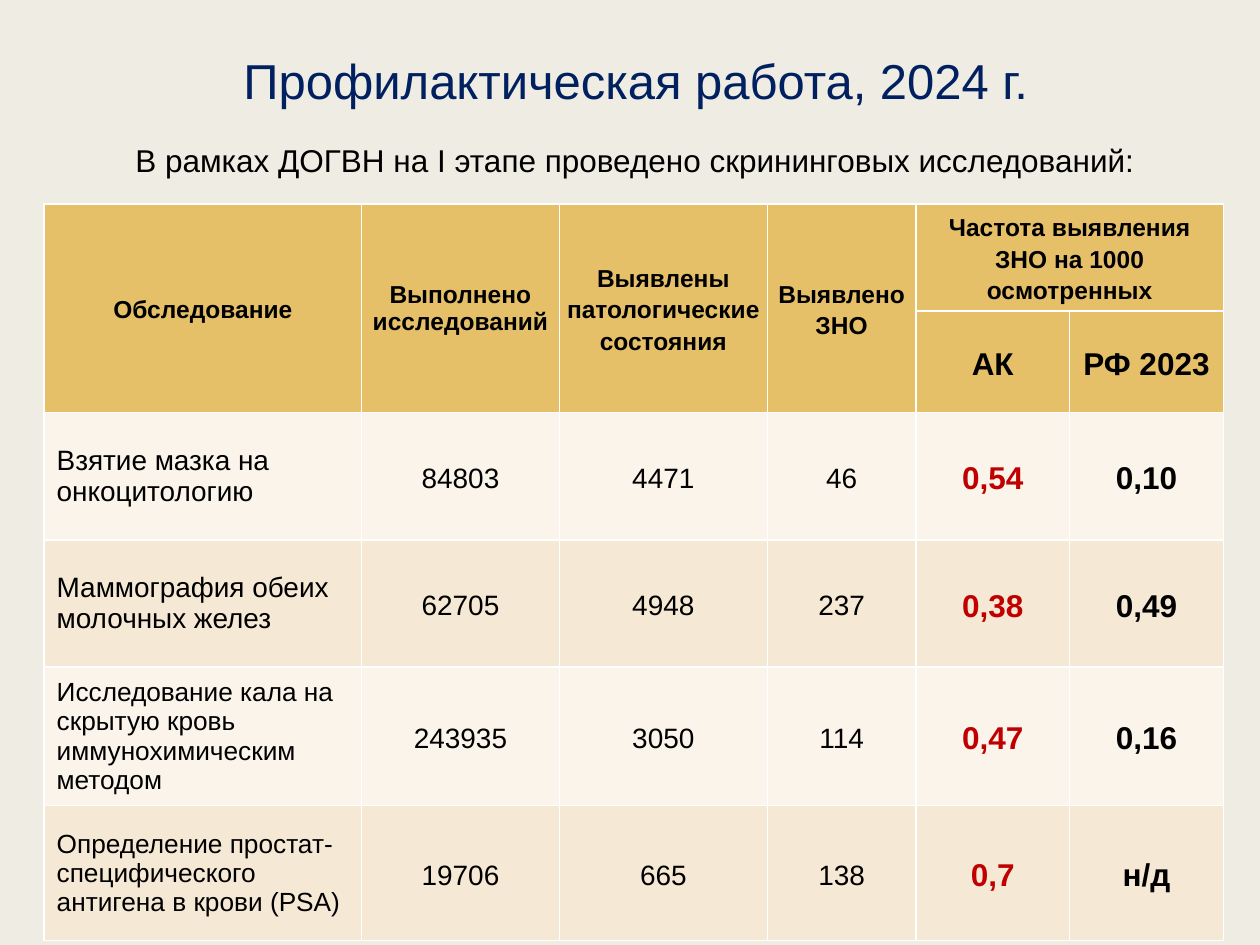
from lxml import etree
from pptx import Presentation
from pptx.dml.color import RGBColor
from pptx.enum.text import MSO_ANCHOR, PP_ALIGN
from pptx.oxml.ns import qn
from pptx.util import Inches, Pt

CENTER, LEFT, MIDDLE = PP_ALIGN.CENTER, PP_ALIGN.LEFT, MSO_ANCHOR.MIDDLE

# Content
TITLE = "Профилактическая работа, 2024 г."
SUBTITLE = "В рамках ДОГВН на I этапе проведено скрининговых исследований:"
HEADERS = ["Обследование", "Выполнено исследований", "Выявлены патологические состояния",
           "Выявлено ЗНО", "Частота выявления ЗНО на 1000 осмотренных"]
REGIONS = ["АК", "РФ 2023"]
ROWS = [
    ("Взятие мазка на онкоцитологию", "84803", "4471", "46", "0,54", "0,10"),
    ("Маммография обеих молочных желез", "62705", "4948", "237", "0,38", "0,49"),
    ("Исследование кала на скрытую кровь иммунохимическим методом",
     "243935", "3050", "114", "0,47", "0,16"),
    ("Определение простат-специфического антигена в крови (PSA)",
     "19706", "665", "138", "0,7", "н/д"),
]
COLUMN_WIDTHS = [2.52, 1.57, 1.65, 1.18, 1.22, 1.22]
ROW_HEIGHTS = [0.85, 0.43, 1.01, 1.01, 1.07, 1.07]
LONG_NAME = 50  # longer names are set one size smaller

THEME = {
    "font": "Arial", "background": "EFEDE3", "title": "002060", "text": "000000",
    "accent": "C00000", "header": "E6C069", "bands": ("FAF4EB", "F5E8D4"), "border": "FFFFFF",
    "title_size": 28, "subtitle_size": 18, "header_size": 14, "rate_size": 18,
    "body_size": 16, "small_size": 15,
}


def write(text_frame, text, size, color=THEME["text"], bold=False, align=CENTER, spacing=None):
    text_frame.text = text
    paragraph = text_frame.paragraphs[0]
    paragraph.alignment = align
    if spacing:
        paragraph.line_spacing = spacing
    font = paragraph.runs[0].font
    font.name, font.size, font.bold = THEME["font"], Pt(size), bold
    font.color.rgb = RGBColor.from_string(color)


def place(shape, left, top, width, height):
    shape.left, shape.top = Inches(left), Inches(top)
    shape.width, shape.height = Inches(width), Inches(height)


def style_cell(cell, fill):
    """Draw white borders on all sides, then fill the cell."""
    properties = cell._tc.get_or_add_tcPr()
    for side in ("a:lnL", "a:lnR", "a:lnT", "a:lnB"):
        line = etree.SubElement(properties, qn(side), w=str(Pt(1)))
        solid = etree.SubElement(line, qn("a:solidFill"))
        etree.SubElement(solid, qn("a:srgbClr"), val=THEME["border"])
    cell.fill.solid()
    cell.fill.fore_color.rgb = RGBColor.from_string(fill)
    cell.vertical_anchor = MIDDLE


def fill_cell(cell, text, size, margin=0.09, spacing=1.15, **style):
    write(cell.text_frame, text, size, spacing=spacing, **style)
    cell.margin_left = cell.margin_right = Inches(margin)
    cell.margin_top = cell.margin_bottom = 0


def add_screening_table(slide):
    frame = slide.shapes.add_table(len(ROW_HEIGHTS), len(COLUMN_WIDTHS), Inches(0.35), Inches(1.62),
                                   Inches(sum(COLUMN_WIDTHS)), Inches(sum(ROW_HEIGHTS)))
    table = frame.table
    for column, width in zip(table.columns, COLUMN_WIDTHS):
        column.width = Inches(width)
    for row, height in zip(table.rows, ROW_HEIGHTS):
        row.height = Inches(height)
    for row in range(len(ROW_HEIGHTS)):
        for column in range(len(COLUMN_WIDTHS)):
            style_cell(table.cell(row, column),
                       THEME["header"] if row < 2 else THEME["bands"][row % 2])

    # Header: four tall cells, then one wide cell above the regions
    for column, text in enumerate(HEADERS):
        cell = table.cell(0, column)
        cell.merge(table.cell(1, column) if column < 4 else table.cell(0, 5))
        fill_cell(cell, text, THEME["header_size"], margin=0.04, bold=True,
                  spacing=None if column == 1 else 1.15)
    for column, text in enumerate(REGIONS, start=4):
        fill_cell(table.cell(1, column), text, THEME["rate_size"], bold=True)

    # Body: name, counts, rates
    for row, (name, *values) in enumerate(ROWS, start=2):
        size = THEME["small_size"] if len(name) > LONG_NAME else THEME["body_size"]
        write(table.cell(row, 0).text_frame, name, size, align=LEFT)
        for column, value in enumerate(values, start=1):
            is_rate = column >= 4
            fill_cell(table.cell(row, column), value,
                      THEME["rate_size"] if is_rate else THEME["body_size"], bold=is_rate,
                      color=THEME["accent"] if column == 4 else THEME["text"])


def main():
    presentation = Presentation()
    presentation.slide_width, presentation.slide_height = Inches(10), Inches(7.5)
    slide = presentation.slides.add_slide(presentation.slide_layouts[5])
    slide.background.fill.solid()
    slide.background.fill.fore_color.rgb = RGBColor.from_string(THEME["background"])

    # Title and subtitle
    title = slide.shapes.title
    place(title, 1.79, 0.35, 6.51, 0.57)
    write(title.text_frame, TITLE, THEME["title_size"], THEME["title"])
    title.text_frame.word_wrap = False
    subtitle = slide.shapes.add_textbox(Inches(0.97), Inches(1.07), Inches(8.14), Inches(0.4))
    write(subtitle.text_frame, SUBTITLE, THEME["subtitle_size"])
    subtitle.text_frame.word_wrap = False

    add_screening_table(slide)
    presentation.save("out.pptx")


if __name__ == "__main__":
    main()
